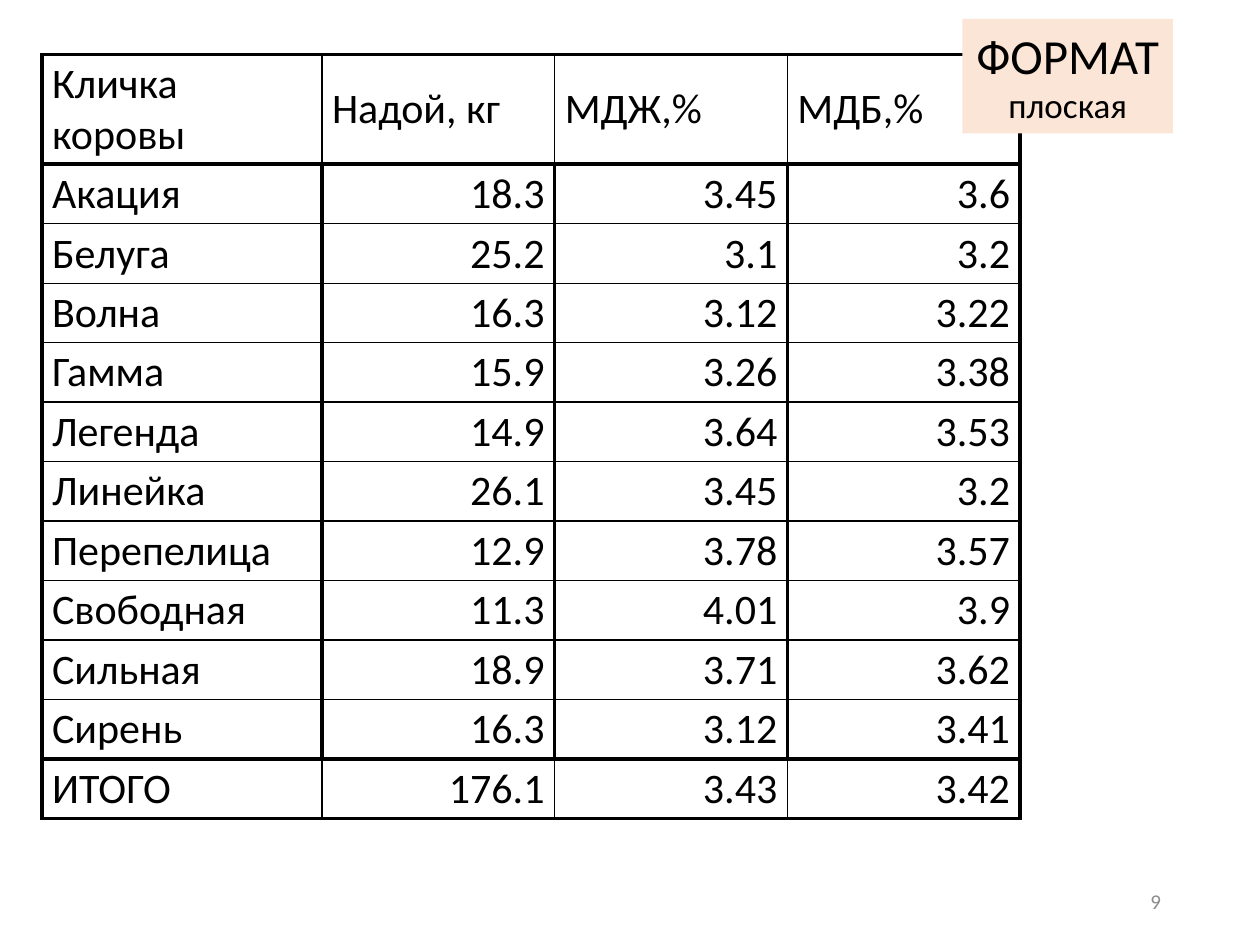
from dataclasses import dataclass

from lxml.etree import SubElement as Sub
from pptx import Presentation
from pptx.dml.color import RGBColor
from pptx.enum.shapes import MSO_SHAPE as Kind
from pptx.enum.text import MSO_ANCHOR as Anchor, MSO_AUTO_SIZE as Fit, PP_ALIGN as Align
from pptx.oxml.ns import qn
from pptx.util import Pt

BLACK, GREY, PEACH = "000000", "8C8C8C", "FBE5D6"
THIN, THICK = 0.75, 2.25
WIDTHS = [160, 133, 133, 133]


@dataclass
class Cow:
    name: str
    milk: str
    fat: str
    protein: str


@dataclass
class Box:
    left: float
    top: float
    width: float
    height: float

    def place(self) -> list:
        return [Pt(v) for v in (self.left, self.top, self.width, self.height)]


HEAD = Cow("Кличка коровы", "Надой, кг", "МДЖ,%", "МДБ,%")
TOTAL = Cow("ИТОГО", "176.1", "3.43", "3.42")
COWS = [
    Cow("Акация", "18.3", "3.45", "3.6"),
    Cow("Белуга", "25.2", "3.1", "3.2"),
    Cow("Волна", "16.3", "3.12", "3.22"),
    Cow("Гамма", "15.9", "3.26", "3.38"),
    Cow("Легенда", "14.9", "3.64", "3.53"),
    Cow("Линейка", "26.1", "3.45", "3.2"),
    Cow("Перепелица", "12.9", "3.78", "3.57"),
    Cow("Свободная", "11.3", "4.01", "3.9"),
    Cow("Сильная", "18.9", "3.71", "3.62"),
    Cow("Сирень", "16.3", "3.12", "3.41"),
]


def paint(target, code: str) -> None:
    target.rgb = RGBColor.from_string(code)


def put(frame, *lines: tuple[str, float], color: str = BLACK,
        align=Align.LEFT, anchor=Anchor.MIDDLE, wrap: bool = True) -> None:
    frame.word_wrap = wrap
    frame.vertical_anchor = anchor
    para = frame.paragraphs[0]
    para.alignment = align
    for i, (text, size) in enumerate(lines):
        if i:
            para.add_line_break()
        run = para.add_run()
        run.text = text
        run.font.name = "Calibri"
        run.font.size = Pt(size)
        paint(run.font.color, color)


def edge(cell, side: str, width: float) -> None:
    line = Sub(cell._tc.get_or_add_tcPr(), qn(f"a:ln{side}"), w=str(Pt(width)))
    Sub(Sub(line, qn("a:solidFill")), qn("a:srgbClr"), val=BLACK)


def border(cell, row: int, col: int, last: int) -> None:
    """Outline the head, body and total bands, with heavy columns in the body."""
    band = row in (0, last)
    heavy = {
        "L": not band or col == 0,
        "R": not band or col == len(WIDTHS) - 1,
        "T": band or row == 1,
        "B": band or row == last - 1,
    }
    for side, thick in heavy.items():
        edge(cell, side, THICK if thick else THIN)


def grid(slide, box: Box, rows: list[Cow]) -> None:
    last = len(rows) - 1
    frame = slide.shapes.add_table(len(rows), len(WIDTHS), *box.place())
    table = frame.table
    table.first_row = table.horz_banding = False
    for col, width in zip(table.columns, WIDTHS):
        col.width = Pt(width)
    for r, cow in enumerate(rows):
        table.rows[r].height = Pt(29)
        for c, text in enumerate((cow.name, cow.milk, cow.fat, cow.protein)):
            cell = table.cell(r, c)
            cell.margin_left = cell.margin_right = Pt(5.76)
            cell.margin_top = cell.margin_bottom = Pt(2.6)
            cell.vertical_anchor = Anchor.MIDDLE
            border(cell, r, c, last)
            cell.fill.background()
            put(cell.text_frame, (text, 24),
                align=Align.RIGHT if r and c else Align.LEFT)
    frame.height = Pt(box.height)


def label(slide, box: Box) -> None:
    shape = slide.shapes.add_shape(Kind.RECTANGLE, *box.place())
    shape.shadow.inherit = False
    shape.fill.solid()
    paint(shape.fill.fore_color, PEACH)
    shape.line.fill.background()
    put(shape.text_frame, ("ФОРМАТ", 28), ("плоская", 20),
        align=Align.CENTER, anchor=Anchor.TOP, wrap=False)
    shape.text_frame.auto_size = Fit.SHAPE_TO_FIT_TEXT


def main() -> None:
    deck = Presentation()
    deck.slide_width, deck.slide_height = Pt(720), Pt(540)
    slide = deck.slides.add_slide(deck.slide_layouts[6])
    page = slide.shapes.add_textbox(*Box(508.5, 500.5, 162, 28.75).place())
    put(page.text_frame, ("9", 12), color=GREY, align=Align.RIGHT)
    grid(slide, Box(24, 31, 559, 443), [HEAD, *COWS, TOTAL])
    label(slide, Box(550, 10.8, 120.25, 65.5))
    deck.save("out.pptx")


if __name__ == "__main__":
    main()
